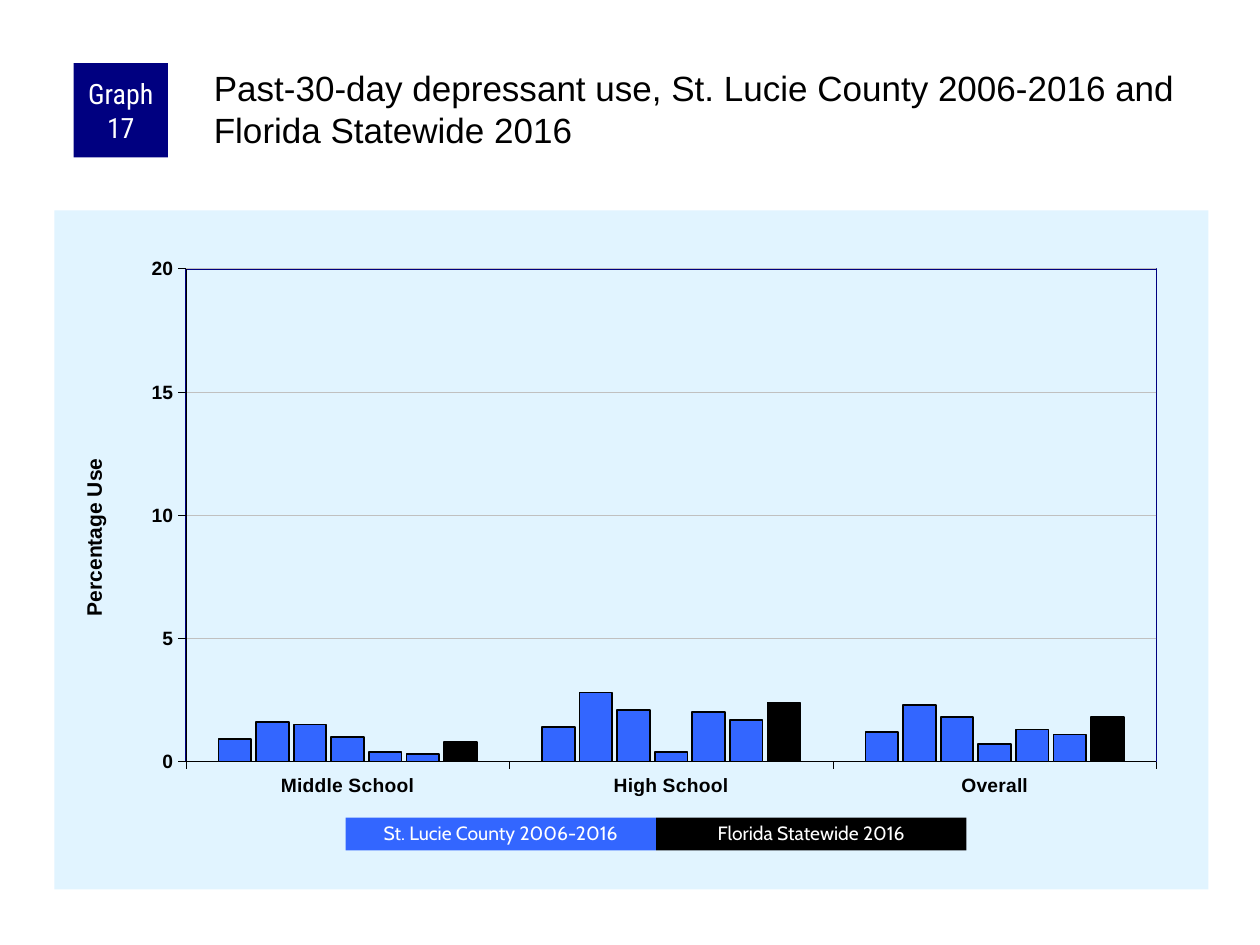
from dataclasses import dataclass

from lxml import etree
from pptx import Presentation
from pptx.chart.data import CategoryChartData
from pptx.dml.color import RGBColor
from pptx.enum.chart import XL_CHART_TYPE, XL_TICK_MARK
from pptx.enum.shapes import MSO_SHAPE
from pptx.enum.text import MSO_ANCHOR, MSO_AUTO_SIZE, PP_ALIGN
from pptx.util import Pt

RECT = MSO_SHAPE.RECTANGLE
COLUMN = XL_CHART_TYPE.COLUMN_CLUSTERED
OUT = XL_TICK_MARK.OUTSIDE
TOP, MIDDLE = MSO_ANCHOR.TOP, MSO_ANCHOR.MIDDLE
LEFT, CENTER = PP_ALIGN.LEFT, PP_ALIGN.CENTER

NAVY = RGBColor(0x00, 0x00, 0x80)
BLUE = RGBColor(0x33, 0x66, 0xFF)
PALE = RGBColor(0xE1, 0xF4, 0xFF)
GRAY = RGBColor(0xC0, 0xC0, 0xC0)
BLACK = RGBColor(0x00, 0x00, 0x00)
WHITE = RGBColor(0xFF, 0xFF, 0xFF)

C = "http://schemas.openxmlformats.org/drawingml/2006/chart"
A = "http://schemas.openxmlformats.org/drawingml/2006/main"

LEVELS = ["Middle School", "High School", "Overall"]
COUNTY = [
    (0.9, 1.4, 1.2),
    (1.6, 2.8, 2.3),
    (1.5, 2.1, 1.8),
    (1, 0.4, 0.7),
    (0.4, 2, 1.3),
    (0.3, 1.7, 1.1),
]
STATE = (0.8, 2.4, 1.8)


@dataclass
class Label:
    text: str
    left: float
    top: float
    width: float
    height: float
    fill: RGBColor
    font: str
    size: float
    spacing: float = 1.0


LABELS = [
    Label("Graph 17", 42, 36, 54, 54, NAVY, "Roboto Condensed", 16),
    Label("St. Lucie County 2006-2016", 197.5, 467.3, 177.4, 18.7,
          BLUE, "Cabin", 11, 0.9),
    Label("Florida Statewide 2016", 374.9, 467.3, 177.4, 18.7,
          BLACK, "Cabin", 11, 0.9),
]


def style(font, name: str, size: float, color: RGBColor, bold: bool = False) -> None:
    font.name, font.size, font.bold = name, Pt(size), bold
    font.color.rgb = color


def draw_label(slide, label: Label) -> None:
    box = slide.shapes.add_shape(
        RECT, Pt(label.left), Pt(label.top), Pt(label.width), Pt(label.height))
    box.shadow.inherit = False
    box.fill.solid()
    box.fill.fore_color.rgb = label.fill
    box.line.fill.background()
    frame = box.text_frame
    frame.word_wrap = True
    frame.vertical_anchor = MIDDLE
    frame.margin_left = frame.margin_right = Pt(3.6)
    frame.margin_top = frame.margin_bottom = 0
    line = frame.paragraphs[0]
    line.text = label.text
    line.alignment = CENTER
    line.line_spacing = label.spacing
    style(line.font, label.font, label.size, WHITE)


def set_title(slide) -> None:
    title = slide.shapes.title
    title.left, title.top = Pt(120), Pt(36)
    title.width, title.height = Pt(570), Pt(60)
    frame = title.text_frame
    frame.auto_size = MSO_AUTO_SIZE.NONE
    frame.word_wrap = True
    frame.vertical_anchor = TOP
    frame.margin_left = frame.margin_top = Pt(2.2)
    frame.margin_right = frame.margin_bottom = 0
    line = frame.paragraphs[0]
    line.text = ("Past-30-day depressant use, St. Lucie County 2006-2016 "
                 "and Florida Statewide 2016")
    line.alignment = LEFT
    style(line.font, "Arial", 20, BLACK)


def set_layout(node, index: int, **spots: float) -> None:
    """Fix the place of a chart part, in fractions of the chart."""
    for old in node.findall(f"{{{C}}}layout"):
        node.remove(old)
    layout = etree.Element(f"{{{C}}}layout")
    manual = etree.SubElement(layout, f"{{{C}}}manualLayout")
    if "w" in spots:
        etree.SubElement(manual, f"{{{C}}}layoutTarget", val="inner")
    for key in ("x", "y"):
        etree.SubElement(manual, f"{{{C}}}{key}Mode", val="edge")
    for key, value in spots.items():
        etree.SubElement(manual, f"{{{C}}}{key}", val=str(value))
    node.insert(index, layout)


def area_props(fill: str, line: str):
    return etree.fromstring(
        f'<c:spPr xmlns:c="{C}" xmlns:a="{A}">{fill}{line}</c:spPr>')


def solid(color: RGBColor) -> str:
    return f'<a:solidFill><a:srgbClr val="{color}"/></a:solidFill>'


def set_axis(axis) -> None:
    axis.major_tick_mark = OUT
    axis.format.line.color.rgb = BLACK
    axis.format.line.width = Pt(0.25)
    style(axis.tick_labels.font, "Arial", 11, BLACK, True)


def draw_chart(slide) -> None:
    data = CategoryChartData()
    data.categories = LEVELS
    for count, values in enumerate([*COUNTY, STATE], 1):
        data.add_series(f"Series {count}", values)
    chart = slide.shapes.add_chart(
        COLUMN, Pt(31), Pt(120.2), Pt(659.5), Pt(388), data).chart
    chart.has_legend = False
    chart.has_title = False
    style(chart.font, "Arial", 8, BLACK)

    plot = chart.plots[0]
    plot.gap_width, plot.overlap = 200, -15
    plot.vary_by_categories = False
    for count, series in enumerate(plot.series):
        form = series.format
        form.fill.solid()
        form.fill.fore_color.rgb = BLUE if count < len(COUNTY) else BLACK
        form.line.color.rgb = BLACK
        form.line.width = Pt(1)

    set_axis(chart.category_axis)
    scale = chart.value_axis
    set_axis(scale)
    scale.minimum_scale, scale.maximum_scale = 0, 20
    scale.major_unit = 5
    grid = scale.major_gridlines.format.line
    grid.color.rgb = GRAY
    grid.width = Pt(0.25)
    head = scale.axis_title.text_frame.paragraphs[0]
    head.text = "Percentage Use"
    style(head.font, "Arial", 12, BLACK, True)
    title = scale.axis_title._element
    set_layout(title, 1, x=0.02, y=0.36)

    root = chart._chartSpace
    area = root.find(f".//{{{C}}}plotArea")
    set_layout(area, 0, x=0.114, y=0.086, w=0.841, h=0.726)
    area.append(area_props("<a:noFill/>", f'<a:ln w="{Pt(1)}">{solid(NAVY)}</a:ln>'))
    root.find(f"{{{C}}}chart").addnext(
        area_props(solid(PALE), "<a:ln><a:noFill/></a:ln>"))


def main() -> None:
    deck = Presentation()
    deck.slide_width, deck.slide_height = Pt(720), Pt(540)
    slide = deck.slides.add_slide(deck.slide_layouts[5])
    set_title(slide)
    draw_chart(slide)
    for label in LABELS:
        draw_label(slide, label)
    deck.save("out.pptx")


if __name__ == "__main__":
    main()
